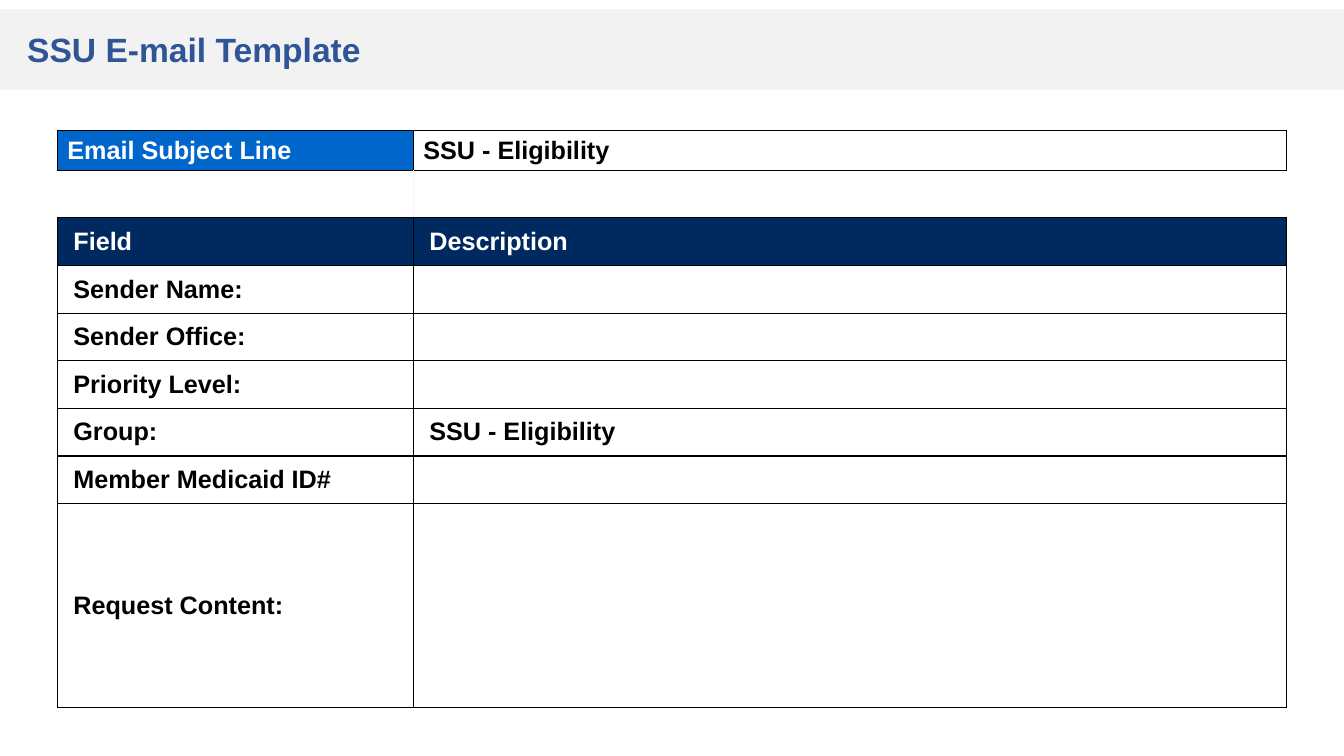
from dataclasses import dataclass

from lxml import etree
from pptx import Presentation
from pptx import util as u
from pptx.dml.color import RGBColor
from pptx.enum import shapes, text
from pptx.oxml import ns

FONT = "Arial"
BLACK, WHITE = "000000", "FFFFFF"
BRIGHT_BLUE, NAVY, TITLE_BLUE = "0066CC", "002960", "2F5597"
BAND_GREY, FAINT_BLUE = "F2F2F2", "F4F7FC"
COLUMN_WIDTHS = (8.97, 22)
FIELD_HEIGHT = 1.2
WIDE_MARGINS = (0.4, 0.2)
NARROW_MARGINS = (0.25, 0.13)


@dataclass(frozen=True)
class FormRow:
    label: str = ""
    value: str = ""
    height: float = FIELD_HEIGHT
    fills: tuple[str | None, str | None] = (None, None)
    colours: tuple[str, str] = (BLACK, BLACK)
    margins: tuple[float, float] = WIDE_MARGINS
    is_gap: bool = False


FORM_ROWS = (
    FormRow("Email Subject Line", "SSU - Eligibility", height=1,
            fills=(BRIGHT_BLUE, None), colours=(WHITE, BLACK), margins=NARROW_MARGINS),
    FormRow(is_gap=True),
    FormRow("Field", "Description", fills=(NAVY, NAVY), colours=(WHITE, WHITE)),
    FormRow("Sender Name:"),
    FormRow("Sender Office:"),
    FormRow("Priority Level:"),
    FormRow("Group:", "SSU - Eligibility"),
    FormRow("Member Medicaid ID#"),
    FormRow("Request Content:", height=5.13),
)


def colour(value: str) -> RGBColor:
    return RGBColor.from_string(value)


def set_attributes(target, values: dict) -> None:
    for name, value in values.items():
        setattr(target, name, value)


def write_text(frame, content: str, size: float, text_colour: str) -> None:
    paragraph = frame.paragraphs[0]
    paragraph.alignment = text.PP_ALIGN.LEFT
    if content:
        run = paragraph.add_run()
        run.text = content
        font = run.font
    else:
        font = paragraph.font
    set_attributes(font, {"name": FONT, "size": u.Pt(size), "bold": True})
    font.color.rgb = colour(text_colour)


def set_border(cell, side: str, line_colour: str | None, width: float) -> None:
    properties = cell._tc.get_or_add_tcPr()
    line = etree.SubElement(properties, ns.qn(f"a:ln{side}"), w=str(u.Pt(width)))
    if line_colour is None:
        etree.SubElement(line, ns.qn("a:noFill"))
    else:
        fill = etree.SubElement(line, ns.qn("a:solidFill"))
        etree.SubElement(fill, ns.qn("a:srgbClr"), val=line_colour)


def format_cell(cell, row: FormRow, column: int) -> None:
    across, down = (u.Cm(margin) for margin in row.margins)
    set_attributes(cell, {
        "margin_left": across, "margin_right": across,
        "margin_top": down, "margin_bottom": down,
        "vertical_anchor": text.MSO_ANCHOR.MIDDLE,
    })
    write_text(cell.text_frame, (row.label, row.value)[column], 18, row.colours[column])
    inner_side = "RL"[column]
    for side in "LRTB":
        if row.is_gap and side in "LR":
            set_border(cell, side, FAINT_BLUE if side == inner_side else None, 0.75)
        else:
            set_border(cell, side, BLACK, 0.98)
    fill = row.fills[column]
    if fill is None:
        cell.fill.background()
    else:
        cell.fill.solid()
        cell.fill.fore_color.rgb = colour(fill)


def add_heading(slide) -> None:
    band = slide.shapes.add_shape(
        shapes.MSO_SHAPE.RECTANGLE, 0, u.Cm(0.23), u.Cm(33.87), u.Cm(2.03))
    band.shadow.inherit = False
    band.fill.solid()
    band.fill.fore_color.rgb = colour(BAND_GREY)
    band.line.fill.background()

    title = slide.shapes.title
    title.element.addprevious(band.element)
    set_attributes(title, {"left": u.Cm(0.43), "top": u.Cm(0.61),
                           "width": u.Cm(27.2), "height": u.Cm(1.27)})
    set_attributes(title.text_frame, {
        "word_wrap": True, "auto_size": text.MSO_AUTO_SIZE.NONE,
        "vertical_anchor": text.MSO_ANCHOR.MIDDLE,
    })
    write_text(title.text_frame, "SSU E-mail Template", 24, TITLE_BLUE)


def add_form(slide) -> None:
    table = slide.shapes.add_table(
        len(FORM_ROWS), len(COLUMN_WIDTHS), u.Cm(1.45), u.Cm(3.29),
        u.Cm(sum(COLUMN_WIDTHS)), u.Cm(sum(row.height for row in FORM_ROWS))).table
    set_attributes(table, {"first_row": False, "horz_banding": False})
    for column, width in enumerate(COLUMN_WIDTHS):
        table.columns[column].width = u.Cm(width)
    for index, row in enumerate(FORM_ROWS):
        table.rows[index].height = u.Cm(row.height)
        for column in range(len(COLUMN_WIDTHS)):
            format_cell(table.cell(index, column), row, column)


def main() -> None:
    presentation = Presentation()
    set_attributes(presentation, {"slide_width": u.Cm(33.87), "slide_height": u.Cm(19.05)})
    slide = presentation.slides.add_slide(presentation.slide_layouts.get_by_name("Title Only"))
    add_heading(slide)
    add_form(slide)
    presentation.save("out.pptx")


if __name__ == "__main__":
    main()
